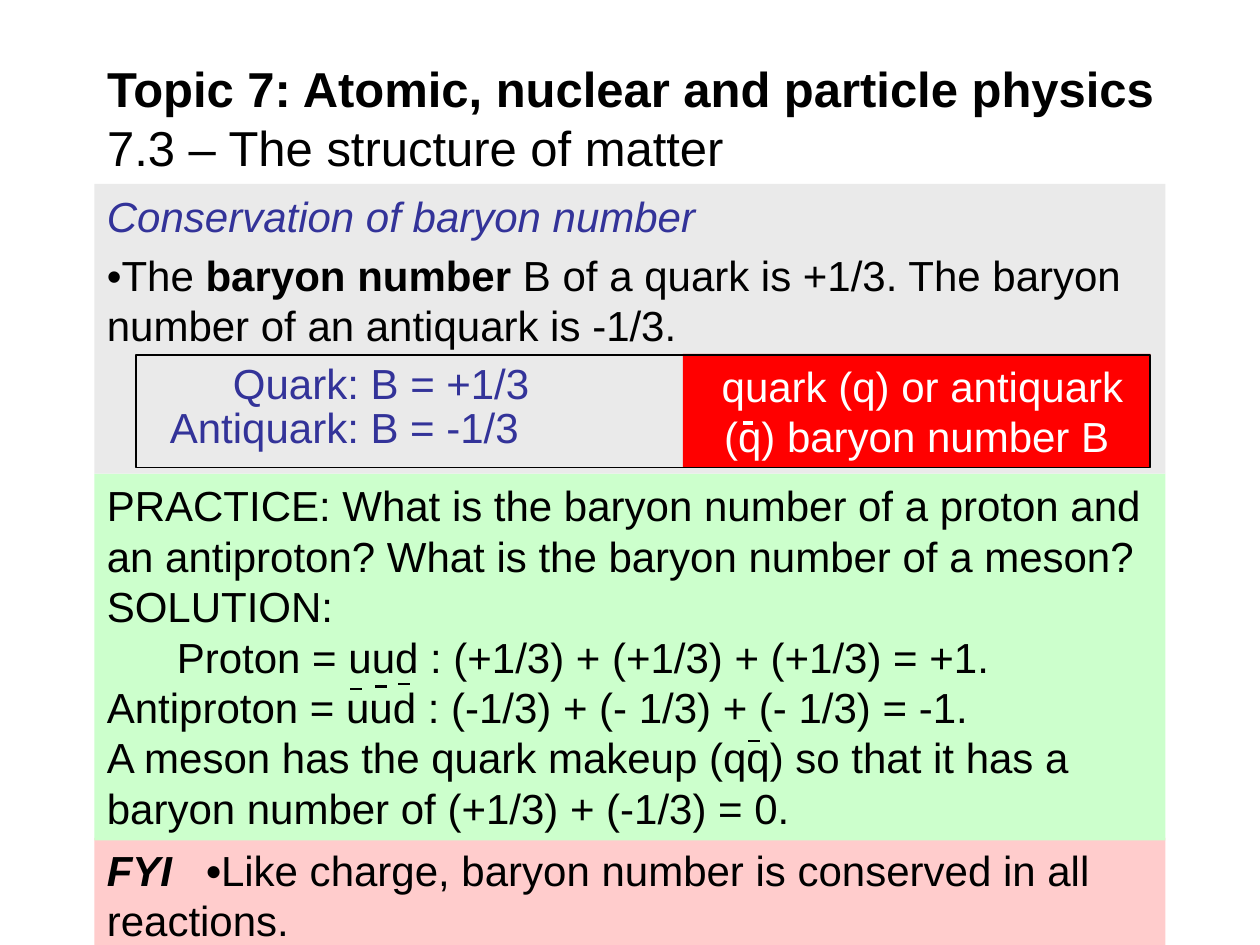
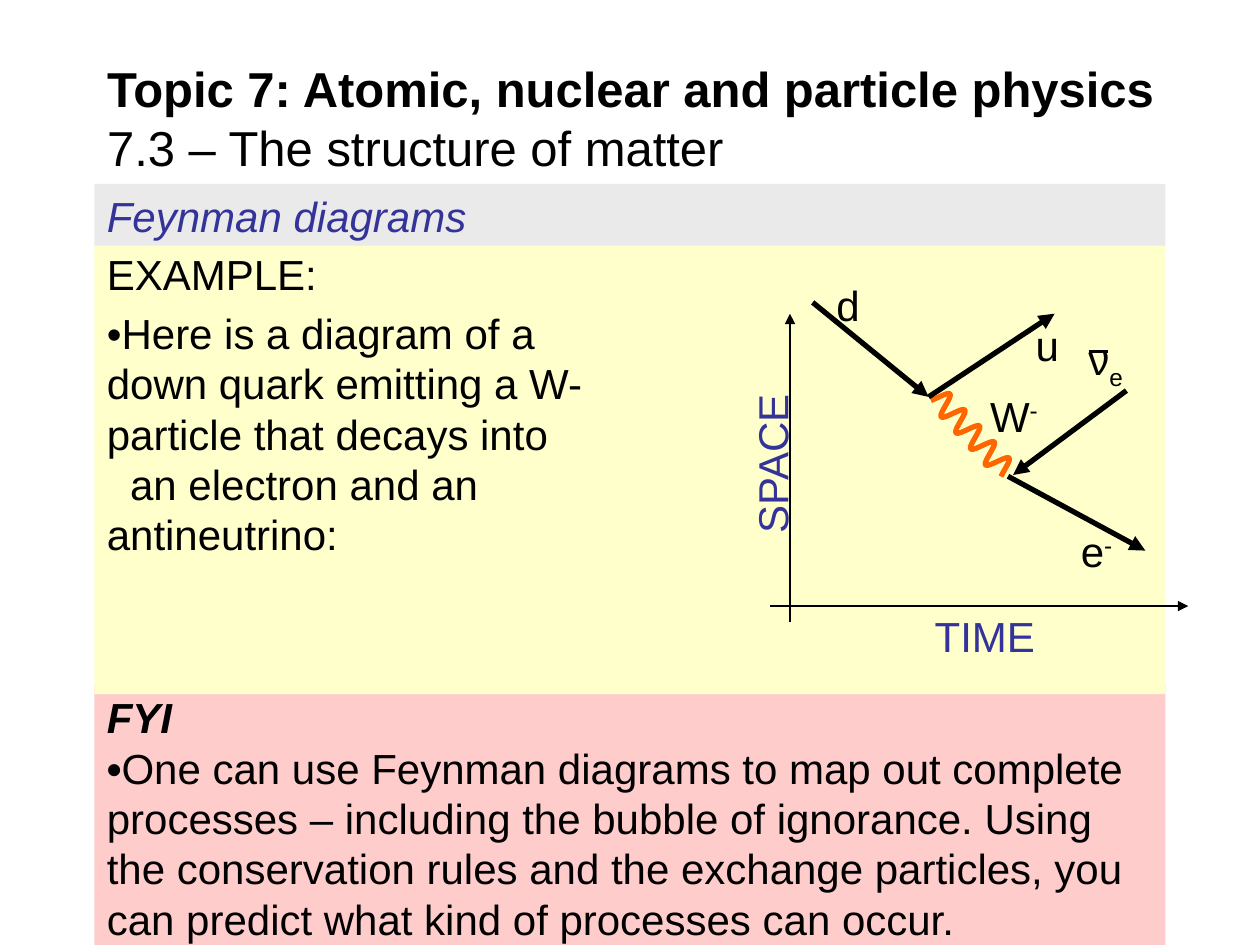
import math

from lxml import etree
from pptx import Presentation
from pptx.dml.color import RGBColor
from pptx.enum.shapes import MSO_CONNECTOR, MSO_SHAPE
from pptx.enum.text import MSO_ANCHOR, MSO_AUTO_SIZE, PP_ALIGN
from pptx.oxml.ns import qn
from pptx.util import Inches, Pt

RECTANGLE = MSO_SHAPE.RECTANGLE
STRAIGHT = MSO_CONNECTOR.STRAIGHT
LEFT, CENTER = PP_ALIGN.LEFT, PP_ALIGN.CENTER
TOP, MIDDLE = MSO_ANCHOR.TOP, MSO_ANCHOR.MIDDLE
NO_AUTO_SIZE = MSO_AUTO_SIZE.NONE
TITLE_ONLY = 5

COLUMNS, ROWS = 100, 75
FONT = "Arial"
BODY_SIZE, TITLE_SIZE = 24, 28
BLACK, WHITE, BLUE = "000000", "FFFFFF", "333399"
GRAY, GREEN, PINK = "EAEAEA", "CCFFCC", "FFCCCC"
YELLOW, RED, ORANGE = "FFFFCC", "FF0000", "FF6600"
BAND_LEFT, BAND_WIDTH, BAND_TOP = 7.5, 85, 14.6


def color(value):
    return RGBColor.from_string(value)


def run(text, ink=BLACK, bold=False, italic=False, baseline=0):
    return text, ink, bold, italic, baseline


def paragraph_of(*runs, align=LEFT, before=0, spacing=None, indent=0, tab=0):
    return runs, align, before, spacing, indent, tab


class Deck:
    def __init__(self):
        self.presentation = Presentation()
        self.presentation.slide_width = Inches(10)
        self.presentation.slide_height = Inches(7.5)
        self.column = self.presentation.slide_width / COLUMNS
        self.row = self.presentation.slide_height / ROWS
        self.slide = None

    def point(self, column, row):
        return round(column * self.column), round(row * self.row)

    def box(self, left, top, width, height):
        return self.point(left, top) + self.point(width, height)

    def start(self):
        layout = self.presentation.slide_layouts[TITLE_ONLY]
        self.slide = self.presentation.slides.add_slide(layout)
        title = self.slide.shapes.title
        title.left, title.top, title.width, title.height = self.box(7.5, 4.8, 89.6, 9.1)
        heading = run("Topic 7: Atomic, nuclear and particle physics\n", bold=True)
        subheading = run("7.3 – The structure of matter")
        self.fill_text(title, [paragraph_of(heading, subheading)], TITLE_SIZE, MIDDLE)

    def fill_text(self, shape, paragraphs, size=BODY_SIZE, anchor=TOP):
        frame = shape.text_frame
        frame.word_wrap = True
        frame.auto_size = NO_AUTO_SIZE
        frame.vertical_anchor = anchor
        for index, (runs, align, before, spacing, indent, tab) in enumerate(paragraphs):
            paragraph = frame.add_paragraph() if index else frame.paragraphs[0]
            paragraph.alignment = align
            paragraph.space_before = Pt(before)
            if spacing:
                paragraph.line_spacing = spacing
            properties = paragraph._p.get_or_add_pPr()
            if indent:
                properties.set("marL", "0")
                properties.set("indent", str(round(indent * self.column)))
            if tab:
                stops = etree.SubElement(properties, qn("a:tabLst"))
                position = str(round(tab * self.column))
                etree.SubElement(stops, qn("a:tab"), pos=position, algn="l")
            for content in runs:
                self.add_run(paragraph, content, size)

    def add_run(self, paragraph, content, size):
        text, ink, bold, italic, baseline = content
        for index, line in enumerate(text.split("\n")):
            if index:
                paragraph.add_line_break()
            if not line:
                continue
            piece = paragraph.add_run()
            piece.text = line
            font = piece.font
            font.name, font.size = FONT, Pt(size)
            font.bold, font.italic = bold, italic
            font.color.rgb = color(ink)
            if baseline:
                font._element.set("baseline", str(baseline * 1000))

    def panel(self, box, fill=None, paragraphs=(), outline=None):
        shape = self.slide.shapes.add_shape(RECTANGLE, *self.box(*box))
        shape.shadow.inherit = False
        if fill:
            shape.fill.solid()
            shape.fill.fore_color.rgb = color(fill)
        else:
            shape.fill.background()
        if outline:
            shape.line.color.rgb = color(outline)
            shape.line.width = Pt(1)
        else:
            shape.line.fill.background()
        self.fill_text(shape, paragraphs)

    def band(self, top, height, fill, paragraphs):
        self.panel((BAND_LEFT, top, BAND_WIDTH, height), fill, paragraphs)

    def label(self, box, *runs, rotation=0, **layout):
        shape = self.slide.shapes.add_textbox(*self.box(*box))
        shape.rotation = rotation
        self.fill_text(shape, [paragraph_of(*runs, **layout)])

    def line(self, start, end, width, ink=BLACK, arrow=False):
        ends = self.point(*start) + self.point(*end)
        connector = self.slide.shapes.add_connector(STRAIGHT, *ends)
        connector.line.color.rgb = color(ink)
        connector.line.width = Pt(width)
        etree.SubElement(connector._element.spPr, qn("a:effectLst"))
        if arrow:
            outline = connector._element.spPr.find(qn("a:ln"))
            etree.SubElement(outline, qn("a:tailEnd"), type="triangle")

    def overbar(self, left, row, length=0.9, width=1.5, ink=BLACK):
        self.line((left, row), (left + length, row), width, ink)

    def wave(self, center, length, period, amplitude, angle, ink, width):
        cosine, sine = math.cos(math.radians(angle)), math.sin(math.radians(angle))
        steps = 120
        points = []
        for step in range(steps + 1):
            along = length * (step / steps - 0.5)
            across = amplitude * math.cos(math.tau * along / period)
            points.append(self.point(center[0] + along * cosine + across * sine,
                                     center[1] + along * sine - across * cosine))
        builder = self.slide.shapes.build_freeform(*points[0])
        builder.add_line_segments(points[1:], close=False)
        shape = builder.convert_to_shape()
        shape.shadow.inherit = False
        shape.fill.background()
        shape.line.color.rgb = color(ink)
        shape.line.width = Pt(width)


def baryon_slide(deck):
    deck.start()
    deck.band(66.5, 8.5, PINK, [paragraph_of(
        run("FYI\t", bold=True, italic=True), run("•", bold=True),
        run("Like charge, baryon number is conserved in all reactions."), tab=7.9)])
    deck.band(37.6, 29.1, GREEN, [
        paragraph_of(run("PRACTICE: What is the baryon number of a proton and an antiproton? "
                         "What is the baryon number of a meson?")),
        paragraph_of(run("SOLUTION:")),
        paragraph_of(run("Proton = uud : (+1/3) + (+1/3) + (+1/3) = +1."), indent=5.56),
        paragraph_of(run("Antiproton = uud : (-1/3) + (- 1/3) + (- 1/3) = -1.")),
        paragraph_of(run("A meson has the quark makeup (qq) so that it has a "
                         "baryon number of (+1/3) + (-1/3) = 0."))])
    deck.band(BAND_TOP, 23, GRAY, [
        paragraph_of(run("Conservation of baryon number", BLUE, italic=True)),
        paragraph_of(run("•The "), run("baryon number ", bold=True),
                     run("B of a quark is +1/3. The baryon number of an antiquark is -1/3."),
                     before=5)])
    deck.panel((54.2, 28.1, 37.1, 9), RED, [paragraph_of(
        run(" quark (q) or antiquark (q) baryon number B", WHITE), align=CENTER)])
    deck.panel((10.8, 28.2, 80.5, 8.9), outline=BLACK)
    deck.label((13.8, 28.3, 39.9, 3.5), run("Quark: B = +1/3", BLUE), spacing=0.9, indent=3.7)
    deck.label((12.5, 31.8, 39.9, 3.5), run("Antiquark: B = -1/3", BLUE), spacing=0.9)
    deck.overbar(59, 33.6, 0.8, 2.25, WHITE)
    for left, row in ((27.8, 54.7), (29.8, 54.5), (31.6, 54.3), (59.4, 58.8)):
        deck.overbar(left, row)


def feynman_slide(deck):
    deck.start()
    deck.band(54.4, 20.6, PINK, [
        paragraph_of(run("FYI", bold=True, italic=True)),
        paragraph_of(run("•", bold=True), run(
            "One can use Feynman diagrams to map out complete processes – including the bubble "
            "of ignorance. Using the conservation rules and the exchange particles, you can "
            "predict what kind of processes can occur."))])
    deck.band(19.2, 35.9, YELLOW, [
        paragraph_of(run("EXAMPLE:")),
        paragraph_of(run("•Here is a diagram of a\ndown quark emitting a W-\n"
                         "particle that decays into"), before=5),
        paragraph_of(run("an electron and an\nantineutrino:"), indent=1.85)])
    deck.band(BAND_TOP, 4.9, GRAY, [
        paragraph_of(run("Feynman diagrams", BLUE, italic=True))])

    deck.wave((77.1, 34.4), 8.2, 1.73, 0.87, 47.3, ORANGE, 3)
    emission, decay = (73.7, 31.5), (80, 37.8)
    for start, end in (((64.5, 24), emission), ((89.4, 31), (80.4, 37.7)),
                       (decay, (90.9, 43.7)), (emission, (83.7, 24.9))):
        deck.line(start, end, 3, arrow=True)
    for start, end in (((62.7, 49.4), (62.7, 24.9)), ((61.1, 48.1), (94.3, 48.1))):
        deck.line(start, end, 0.75, arrow=True)

    deck.label((53.9, 33.5, 14.7, 5), run("SPACE", BLUE), rotation=270)
    deck.label((73.2, 48, 10.6, 5), run("TIME", BLUE))
    for left, top, width, name, mark, baseline in (
            (65.4, 21.7, 4.8, "d", "", 0), (81.2, 24.9, 4.8, "u", "", 0),
            (84.8, 41.2, 6.2, "e", "-", 30), (85.4, 26, 6.2, "ν", "e", -25),
            (77.6, 30.5, 7.6, "W", "-", 30)):
        deck.label((left, top, width, 5), run(name), run(mark, baseline=baseline))
    deck.overbar(86.4, 27.9, 1.5)


def main():
    deck = Deck()
    baryon_slide(deck)
    feynman_slide(deck)
    deck.presentation.save("out.pptx")


if __name__ == "__main__":
    main()
